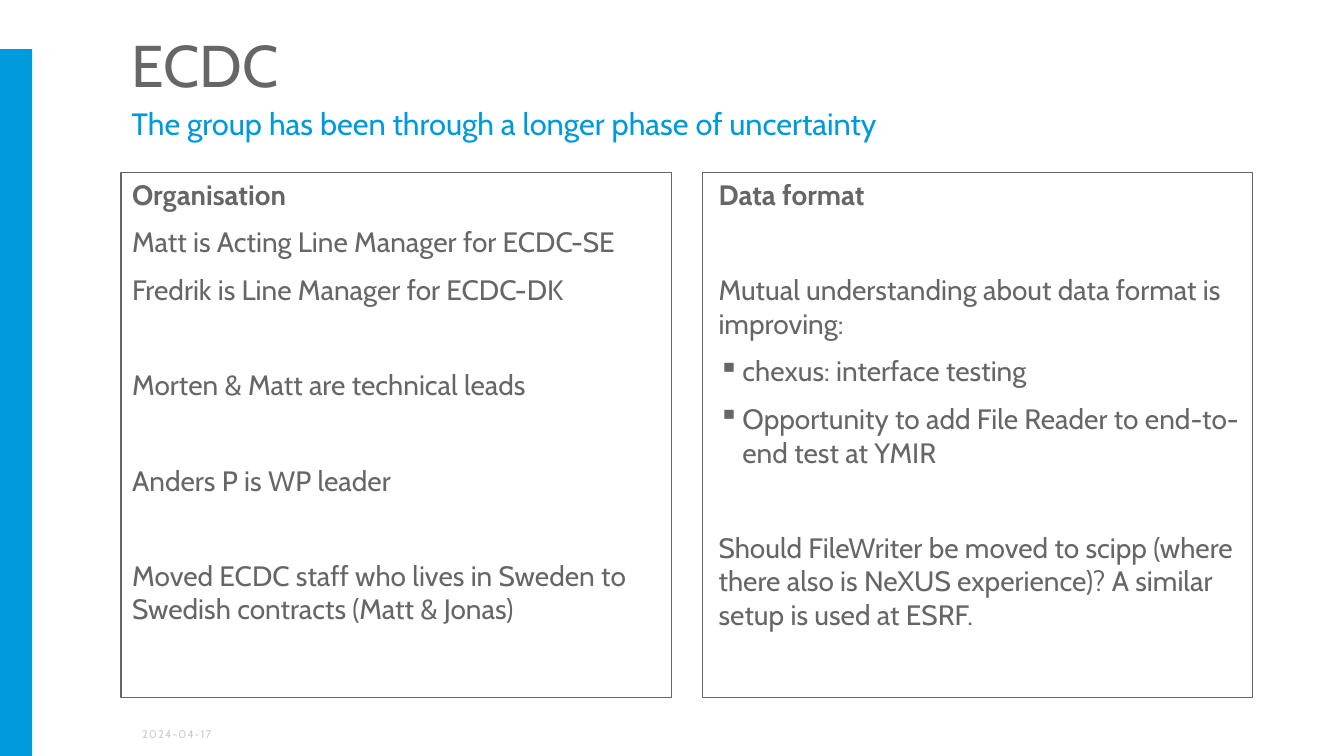
from lxml import etree
from pptx import Presentation
from pptx.dml.color import RGBColor
from pptx.enum.shapes import MSO_SHAPE
from pptx.enum.text import MSO_ANCHOR, PP_ALIGN
from pptx.oxml.ns import qn
from pptx.util import Cm, Pt

COLORS = {"blue": "0099DC", "grey": "666666", "pale": "CCCCCC"}
FONT = "Cabin"
PARAGRAPH_GAP = Pt(10)
SECTION_GAP = Pt(44)  # one 24 pt line between two paragraph gaps


def set_frame(shape, left, top, right, bottom, anchor=MSO_ANCHOR.TOP):
    """Set the margins (in cm) and anchor of a shape's text frame and return it."""
    frame = shape.text_frame
    settings = {
        "word_wrap": True,
        "vertical_anchor": anchor,
        "margin_left": Cm(left),
        "margin_top": Cm(top),
        "margin_right": Cm(right),
        "margin_bottom": Cm(bottom),
    }
    for name, value in settings.items():
        setattr(frame, name, value)
    return frame


def write(paragraph, text, size, color, bold=False):
    paragraph.alignment = PP_ALIGN.LEFT
    run = paragraph.add_run()
    run.text = text
    for name, value in {"name": FONT, "size": Pt(size), "bold": bold}.items():
        setattr(run.font, name, value)
    run.font.color.rgb = RGBColor.from_string(COLORS[color])
    return run


presentation = Presentation()
presentation.slide_width = Cm(33.87)
presentation.slide_height = Cm(19.05)
slide = presentation.slides.add_slide(presentation.slide_layouts[6])

# Side bar
bar = slide.shapes.add_shape(MSO_SHAPE.RECTANGLE, 0, Cm(1.24), Cm(0.81), Cm(17.81))
bar.shadow.inherit = False
bar.fill.solid()
bar.fill.fore_color.rgb = RGBColor.from_string(COLORS["blue"])
bar.line.fill.background()

# Title and subtitle
title = slide.shapes.add_textbox(Cm(3.07), Cm(0.74), Cm(26.01), Cm(1.83))
title_paragraph = set_frame(title, 0.25, 0.13, 0.25, 0.05, MSO_ANCHOR.BOTTOM).paragraphs[0]
title_paragraph.line_spacing = 0.9
write(title_paragraph, "ECDC", 42, "grey")

subtitle = slide.shapes.add_textbox(Cm(3.07), Cm(2.59), Cm(26.01), Cm(1.4))
subtitle_paragraph = set_frame(subtitle, 0.25, 0.05, 0.25, 0.13).paragraphs[0]
write(subtitle_paragraph, "The group has been through a longer phase of uncertainty", 22, "blue")

# Panels: left edge, text indent, and lines of (kind, text)
panels = [
    (3.05, 0.28, [
        ("heading", "Organisation"),
        ("text", "Matt is Acting Line Manager for ECDC-SE"),
        ("text", "Fredrik is Line Manager for ECDC-DK"),
        ("section", "Morten & Matt are technical leads"),
        ("section", "Anders P is WP leader"),
        ("section", "Moved ECDC staff who lives in Sweden to Swedish contracts (Matt & Jonas)"),
    ]),
    (17.7, 0.41, [
        ("heading", "Data format"),
        ("section", "Mutual understanding about data format is improving:"),
        ("bullet", "chexus: interface testing"),
        ("bullet", "Opportunity to add File Reader to end-to-end test at YMIR"),
        ("section", "Should FileWriter be moved to scipp (where there also is NeXUS experience)? "
                    "A similar setup is used at ESRF."),
    ]),
]
BULLET_HANG = 0.6

for left, indent, lines in panels:
    panel = slide.shapes.add_shape(MSO_SHAPE.RECTANGLE, Cm(left), Cm(4.34), Cm(13.87), Cm(13.23))
    panel.shadow.inherit = False
    panel.fill.background()
    panel.line.color.rgb = RGBColor.from_string(COLORS["grey"])
    panel.line.width = Pt(0.75)
    frame = set_frame(panel, 0, 0.13, 0.05, 0.13)
    for number, (kind, text) in enumerate(lines):
        paragraph = frame.add_paragraph() if number else frame.paragraphs[0]
        if number:
            paragraph.space_before = SECTION_GAP if kind == "section" else PARAGRAPH_GAP
        properties = paragraph._p.get_or_add_pPr()
        hang = BULLET_HANG if kind == "bullet" else 0
        properties.set("marL", str(Cm(indent + hang)))
        properties.set("indent", str(-Cm(hang)))
        if kind == "bullet":
            bullet_color = etree.SubElement(properties, qn("a:buClr"))
            etree.SubElement(bullet_color, qn("a:srgbClr"), val=COLORS["grey"])
            etree.SubElement(properties, qn("a:buChar"), char="▪")
        write(paragraph, text, 20, "grey", kind == "heading")

# Date
date = slide.shapes.add_textbox(Cm(3.33), Cm(17.98), Cm(2.31), Cm(1.02))
date_frame = set_frame(date, 0.25, 0.13, 0.25, 0.13, MSO_ANCHOR.MIDDLE)
date_run = write(date_frame.paragraphs[0], "2024-04-17", 8, "pale")
date_run.font._element.set("spc", "80")

presentation.save("out.pptx")
